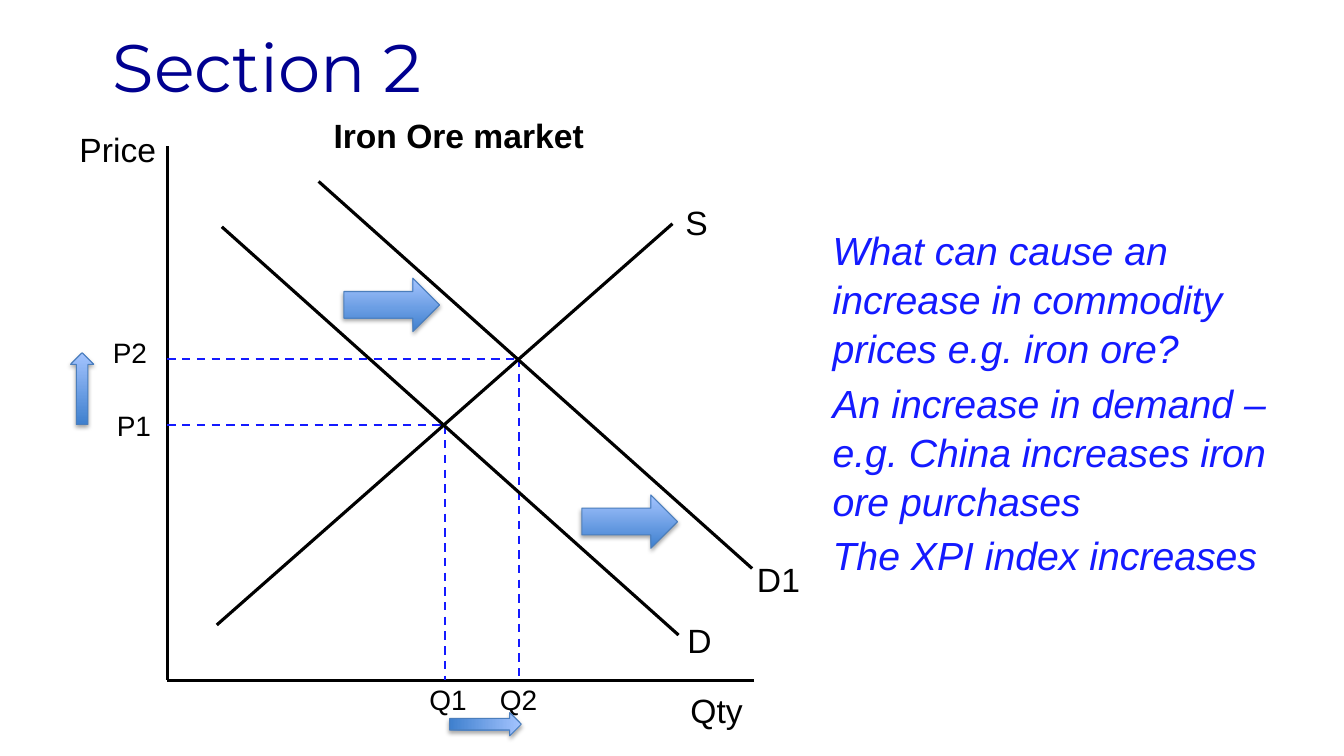
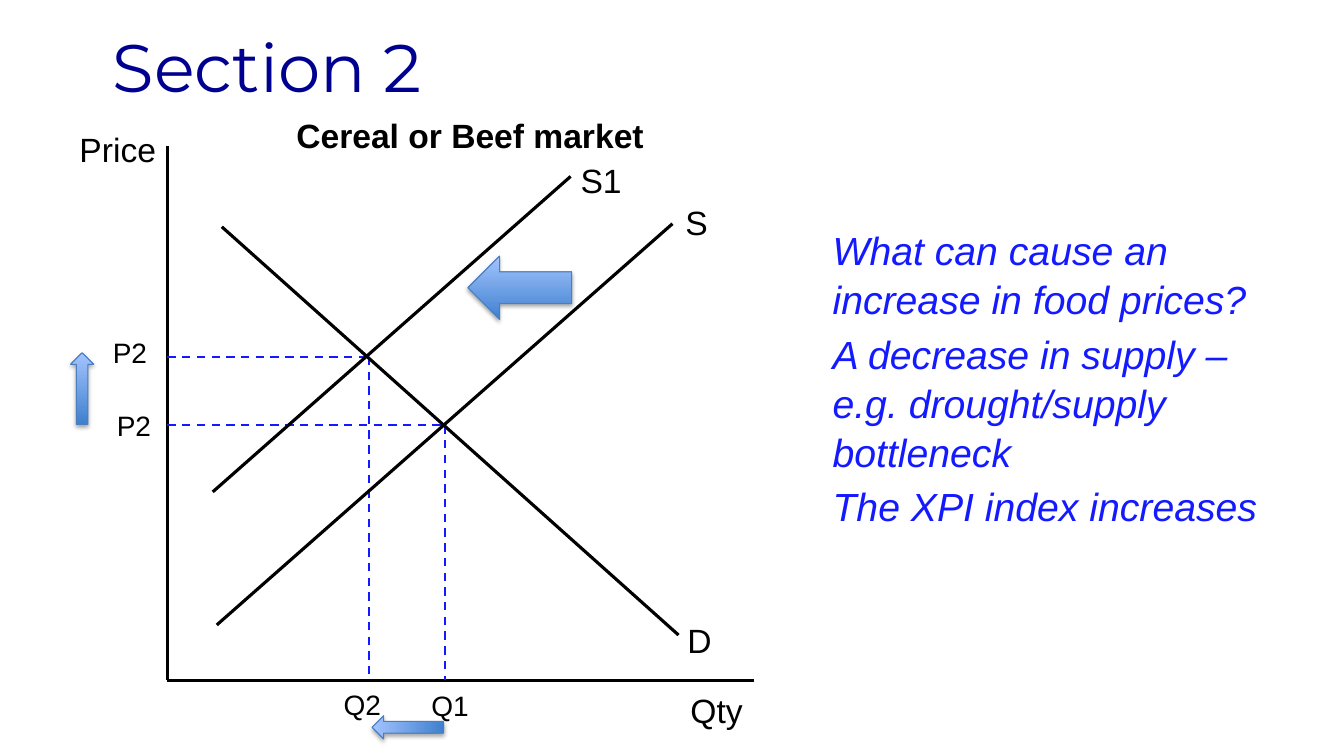
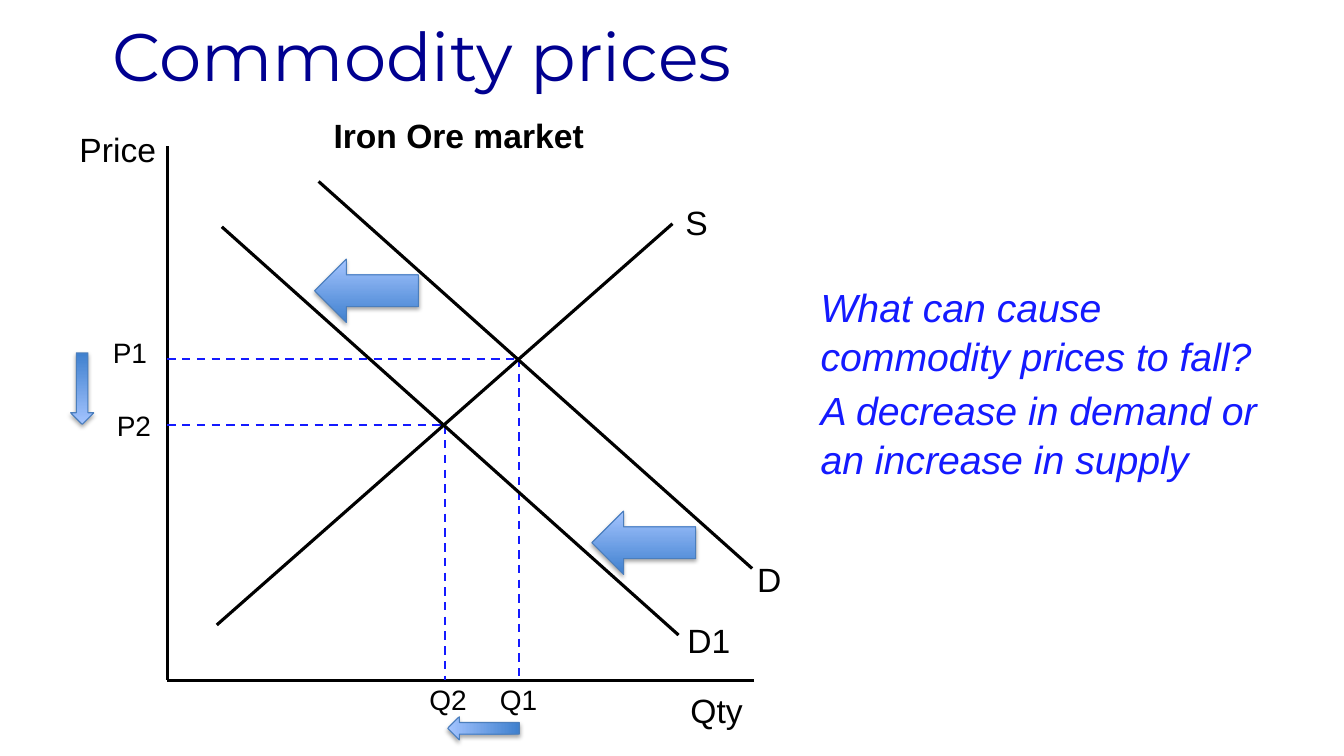
"""Build three supply and demand slides on commodity prices."""
from dataclasses import dataclass

from lxml import etree
from pptx import Presentation
from pptx.dml.color import RGBColor
from pptx.enum import dml, shapes, text
from pptx.oxml import ns
from pptx.slide import Slide
from pptx.util import Inches, Pt

NAVY = RGBColor(0x00, 0x00, 0x90)
BLUE = RGBColor(0x14, 0x1A, 0xFF)
BLACK = RGBColor(0x00, 0x00, 0x00)
ARROW_DARK = RGBColor(0x3F, 0x80, 0xCE)
ARROW_LIGHT = RGBColor(0xA4, 0xC4, 0xFF)
ARROW_EDGE = RGBColor(0x4B, 0x7E, 0xBC)

AXIS_LEFT, AXIS_TOP, AXIS_RIGHT, AXIS_BOTTOM = 1.66, 1.45, 7.48, 6.75
LABEL_HEIGHT = 0.5
RIGHT, LEFT, UP = (
    shapes.MSO_SHAPE.RIGHT_ARROW,
    shapes.MSO_SHAPE.LEFT_ARROW,
    shapes.MSO_SHAPE.UP_ARROW,
)

Point = tuple[float, float]
Box = tuple[float, float, float, float]


@dataclass(frozen=True)
class Curve:
    start: Point
    end: Point
    label: str
    label_at: Point


@dataclass(frozen=True)
class Equilibrium:
    qty: float
    price: float
    qty_label: str
    qty_label_at: Point
    price_label: str
    price_label_at: Point


@dataclass(frozen=True)
class Arrow:
    kind: shapes.MSO_SHAPE
    box: Box
    rotation: float = 0


@dataclass(frozen=True)
class Market:
    title: str
    title_height: float
    heading: str
    heading_box: Box
    answer_box: Box
    answers: tuple[str, ...]
    curves: tuple[Curve, ...]
    equilibria: tuple[Equilibrium, ...]
    arrows: tuple[Arrow, ...]


def supply(label: str) -> Curve:
    return Curve((2.15, 6.2), (6.67, 2.22), label, (6.7, 1.95))


def inner_demand(label: str) -> Curve:
    return Curve((2.2, 2.25), (6.73, 6.3), label, (6.72, 6.1))


def outer_demand(label: str) -> Curve:
    return Curve((3.16, 1.8), (7.46, 5.64), label, (7.41, 5.5))


def low_price(qty_label: str, price_label: str, label_at: Point = (4.16, 6.72)) -> Equilibrium:
    return Equilibrium(4.41, 4.22, qty_label, label_at, price_label, (1.06, 4))


def high_price(qty_label: str, price_label: str) -> Equilibrium:
    return Equilibrium(5.15, 3.56, qty_label, (4.86, 6.72), price_label, (1.02, 3.28))


def small_arrow(left: float, top: float, rotation: float = 0) -> Arrow:
    return Arrow(UP, (left, top, 0.23, 0.71), rotation)


PRICE_RISE = small_arrow(0.7, 3.5)
PRICE_FALL = small_arrow(0.7, 3.5, 180)
IRON_HEADING = "Iron Ore market"
IRON_HEADING_BOX = (3.21, 1.09, 3.3, LABEL_HEIGHT)

MARKETS = (
    Market(
        "Section 2", 1.3, IRON_HEADING, IRON_HEADING_BOX, (8.16, 2.18, 4.84, 3.51),
        (
            "What can cause an increase in commodity prices e.g. iron ore?",
            "An increase in demand – e.g. China increases iron ore purchases",
            "The XPI index increases",
        ),
        (inner_demand("D"), supply("S"), outer_demand("D1")),
        (high_price("Q2", "P2"), low_price("Q1", "P1")),
        (
            Arrow(RIGHT, (3.41, 2.76, 0.95, 0.53)),
            Arrow(RIGHT, (5.77, 4.91, 0.95, 0.53)),
            PRICE_RISE,
            small_arrow(4.7, 6.83, 90),
        ),
    ),
    Market(
        "Section 2", 1.3, "Cereal or Beef market", (2.84, 1.09, 4.11, LABEL_HEIGHT),
        (8.16, 2.18, 4.84, 3.04),
        (
            "What can cause an increase in food prices?",
            "A decrease in supply – e.g. drought/supply bottleneck",
            "The XPI index increases",
        ),
        (
            inner_demand("D"),
            supply("S"),
            Curve((2.11, 4.88), (5.66, 1.75), "S1", (5.66, 1.54)),
        ),
        (
            Equilibrium(3.66, 3.54, "Q2", (3.31, 6.77), "P2", (1.02, 3.28)),
            low_price("Q1", "P2", (4.18, 6.78)),
        ),
        (
            Arrow(LEFT, (4.64, 2.54, 1.03, 0.63)),
            PRICE_RISE,
            small_arrow(3.93, 6.86, 270),
        ),
    ),
    Market(
        "Commodity prices", 1.08, IRON_HEADING, IRON_HEADING_BOX, (8.04, 2.74, 4.84, 2.04),
        (
            "What can cause commodity prices to fall?",
            "A decrease in demand or an increase in supply",
        ),
        (inner_demand("D1"), supply("S"), outer_demand("D")),
        (high_price("Q1", "P1"), low_price("Q2", "P2")),
        (
            Arrow(LEFT, (3.12, 2.57, 1.03, 0.63)),
            Arrow(LEFT, (5.87, 5.07, 1.03, 0.63)),
            PRICE_FALL,
            small_arrow(4.68, 6.87, 270),
        ),
    ),
)


def add_text(
    slide: Slide,
    box: Box,
    *paragraphs: str,
    size: float = 24,
    color: RGBColor = BLACK,
    font: str = "Arial",
    bold: bool = False,
    italic: bool = False,
    wrap: bool = True,
    middle: bool = False,
    space_after: float = 0,
    line_spacing: float = 1.0,
) -> None:
    frame = slide.shapes.add_textbox(*map(Inches, box)).text_frame
    frame.word_wrap = wrap
    frame.vertical_anchor = text.MSO_ANCHOR.MIDDLE if middle else text.MSO_ANCHOR.TOP
    frame.text = "\n".join(paragraphs)
    for paragraph in frame.paragraphs:
        paragraph.space_after = Pt(space_after)
        paragraph.line_spacing = line_spacing
        style = paragraph.runs[0].font
        style.name, style.size, style.color.rgb = font, Pt(size), color
        style.bold, style.italic = bold, italic


def add_label(slide: Slide, label: str, at: Point, width: float, size: float = 24) -> None:
    add_text(slide, (*at, width, LABEL_HEIGHT), label, size=size, wrap=False)


def add_line(slide: Slide, start: Point, end: Point, guide: bool = False) -> None:
    line = slide.shapes.add_connector(
        shapes.MSO_CONNECTOR.STRAIGHT, *map(Inches, (*start, *end))
    )
    line.line.color.rgb = BLUE if guide else BLACK
    line.line.width = Pt(1.5 if guide else 2.25)
    if guide:
        line.line.dash_style = dml.MSO_LINE.DASH
    etree.SubElement(line._element.spPr, ns.qn("a:effectLst"))


def add_arrow(slide: Slide, arrow: Arrow) -> None:
    shape = slide.shapes.add_shape(arrow.kind, *map(Inches, arrow.box))
    shape.rotation = arrow.rotation
    shape.fill.gradient()
    shape.fill.gradient_angle = 90
    for stop, color in zip(shape.fill.gradient_stops, (ARROW_DARK, ARROW_LIGHT)):
        stop.color.rgb = color
    for stop, position in zip(shape.fill.gradient_stops, (0, 1)):
        stop.position = position
    shape.line.color.rgb = ARROW_EDGE
    shape.line.width = Pt(0.75)
    shape.shadow.inherit = False
    effects = shape._element.spPr.find(ns.qn("a:effectLst"))
    shadow = etree.SubElement(
        effects, ns.qn("a:outerShdw"),
        blurRad=str(Pt(3.1)), dist=str(Pt(1.8)), dir="5400000", rotWithShape="0",
    )
    shade = etree.SubElement(shadow, ns.qn("a:srgbClr"), val=str(BLACK))
    etree.SubElement(shade, ns.qn("a:alpha"), val="35000")


def add_axes(slide: Slide) -> None:
    origin = (AXIS_LEFT, AXIS_BOTTOM)
    add_line(slide, (AXIS_LEFT, AXIS_TOP), origin)
    add_line(slide, (AXIS_RIGHT, AXIS_BOTTOM), origin)
    add_label(slide, "Qty", (6.75, 6.8), 0.72)
    add_label(slide, "Price", (0.69, 1.23), 0.97)


def add_curve(slide: Slide, curve: Curve) -> None:
    add_line(slide, curve.start, curve.end)
    add_label(slide, curve.label, curve.label_at, 0.45 if len(curve.label) == 1 else 0.63)


def add_equilibrium(slide: Slide, balance: Equilibrium) -> None:
    crossing = (balance.qty, balance.price)
    add_line(slide, crossing, (balance.qty, AXIS_BOTTOM), guide=True)
    add_line(slide, (AXIS_LEFT, balance.price), crossing, guide=True)
    add_label(slide, balance.qty_label, balance.qty_label_at, 0.58, size=20)
    add_label(slide, balance.price_label, balance.price_label_at, 0.55, size=20)


def add_market(slide: Slide, market: Market) -> None:
    add_text(
        slide, (1.02, 0, 10.14, market.title_height), market.title,
        size=48, color=NAVY, font="Montserrat", middle=True,
    )
    add_text(
        slide, market.answer_box, *market.answers,
        size=28, color=BLUE, italic=True, space_after=4, line_spacing=1.04,
    )
    add_axes(slide)
    for balance in market.equilibria:
        add_equilibrium(slide, balance)
    for curve in market.curves:
        add_curve(slide, curve)
    add_text(slide, market.heading_box, market.heading, bold=True)
    for arrow in market.arrows:
        add_arrow(slide, arrow)


def main() -> None:
    deck = Presentation()
    deck.slide_width, deck.slide_height = Inches(13.33), Inches(7.5)
    blank = deck.slide_layouts[6]
    for market in MARKETS:
        add_market(deck.slides.add_slide(blank), market)
    deck.save("out.pptx")


if __name__ == "__main__":
    main()
